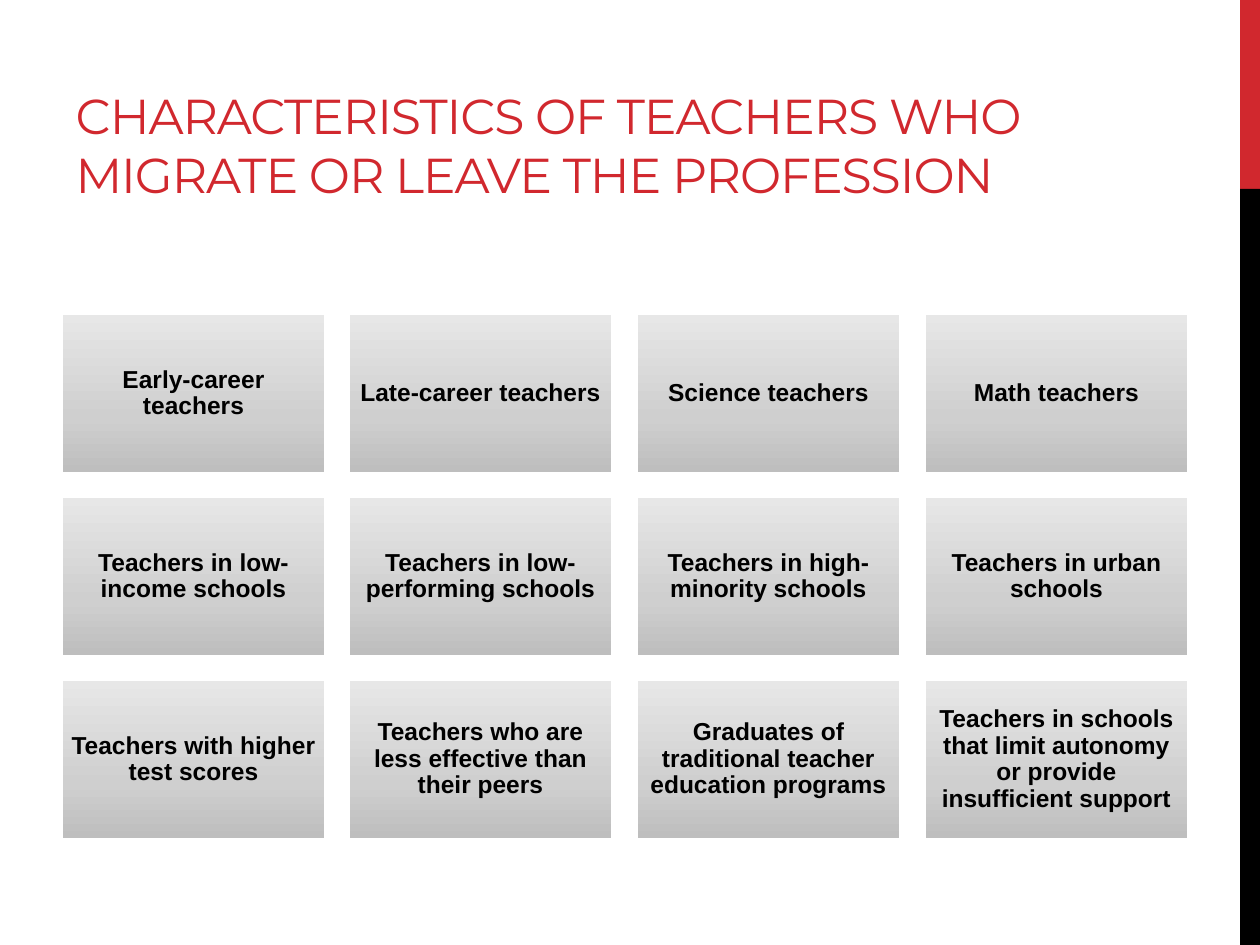
from copy import deepcopy

from pptx import Presentation
from pptx.dml.color import RGBColor
from pptx.enum import shapes, text
from pptx.oxml import ns
from pptx.util import Pt

# Content
TITLE = "CHARACTERISTICS OF TEACHERS WHO MIGRATE OR LEAVE THE PROFESSION"
TILES = [
    ["Early-career teachers", "Late-career teachers",
     "Science teachers", "Math teachers"],
    ["Teachers in low-income schools", "Teachers in low-performing schools",
     "Teachers in high-minority schools", "Teachers in urban schools"],
    ["Teachers with higher test scores",
     "Teachers who are less effective than their peers",
     "Graduates of traditional teacher education programs",
     "Teachers in schools that limit autonomy or provide insufficient support"],
]
BARS = [(0, 189, "D1282E"), (189, 756, "000000")]
STOPS = [(0, "BEBEBE"), (0.35, "CFCFCF"), (1, "E7E7E7")]

# Formats
HEAD = {"name": "Montserrat", "size": Pt(28), "bold": False}
LABEL = {"name": "Arial", "size": Pt(14), "bold": True}

# Layout in px
WIDE, HIGH = 1260, 945
LEFT, TOP = 63, 315
SPAN, STEP = 863, 183  # first to last column, row to row
TILE_W, TILE_H = 261, 157
INSET = 7
BAR_X = 1240


def px(n):
    return round(n * 914400 / 126)


def rgb(code):
    return RGBColor.from_string(code)


def style(font, values, color):
    for key, value in values.items():
        setattr(font, key, value)
    font.color.rgb = rgb(color)


def rect(x, y, w, h):
    box = slide.shapes.add_shape(shapes.MSO_SHAPE.RECTANGLE,
                                 px(x), px(y), px(w), px(h))
    box.shadow.inherit = False
    box.line.fill.background()
    return box


def shade(box):
    fill = box.fill
    fill.gradient()
    fill.gradient_angle = 90
    # A new gradient has two stops; add a third
    stops = box._element.spPr.find(".//" + ns.qn("a:gsLst"))
    stops.append(deepcopy(stops[0]))
    for stop, (place, color) in zip(fill.gradient_stops, STOPS):
        stop.position = place
        stop.color.rgb = rgb(color)


def tile(x, y, words):
    box = rect(x, y, TILE_W, TILE_H)
    shade(box)
    frame = box.text_frame
    frame.word_wrap = True
    frame.vertical_anchor = text.MSO_ANCHOR.MIDDLE
    for side in ("left", "top", "right", "bottom"):
        setattr(frame, "margin_" + side, px(INSET))
    para = frame.paragraphs[0]
    para.text = words
    para.alignment = text.PP_ALIGN.CENTER
    para.line_spacing = 0.9
    style(para.runs[0].font, LABEL, "000000")


deck = Presentation()
deck.slide_width, deck.slide_height = px(WIDE), px(HIGH)
slide = deck.slides.add_slide(deck.slide_layouts[5])

# Side bars
for y, h, color in BARS:
    bar = rect(BAR_X, y, WIDE - BAR_X, h)
    bar.fill.solid()
    bar.fill.fore_color.rgb = rgb(color)

# Title
title = slide.shapes.title
title.left, title.top, title.width, title.height = map(px, (63, 21, 1125, 189))
frame = title.text_frame
frame.text = TITLE
frame.word_wrap = True
frame.auto_size = text.MSO_AUTO_SIZE.NONE
frame.vertical_anchor = text.MSO_ANCHOR.BOTTOM
para = frame.paragraphs[0]
para.alignment = text.PP_ALIGN.LEFT
style(para.runs[0].font, HEAD, "D1282E")
para.runs[0]._r.get_or_add_rPr().set("spc", "-60")

# Tile grid
for row, line in enumerate(TILES):
    for col, words in enumerate(line):
        tile(LEFT + SPAN * col // (len(line) - 1), TOP + STEP * row, words)

deck.save("out.pptx")
